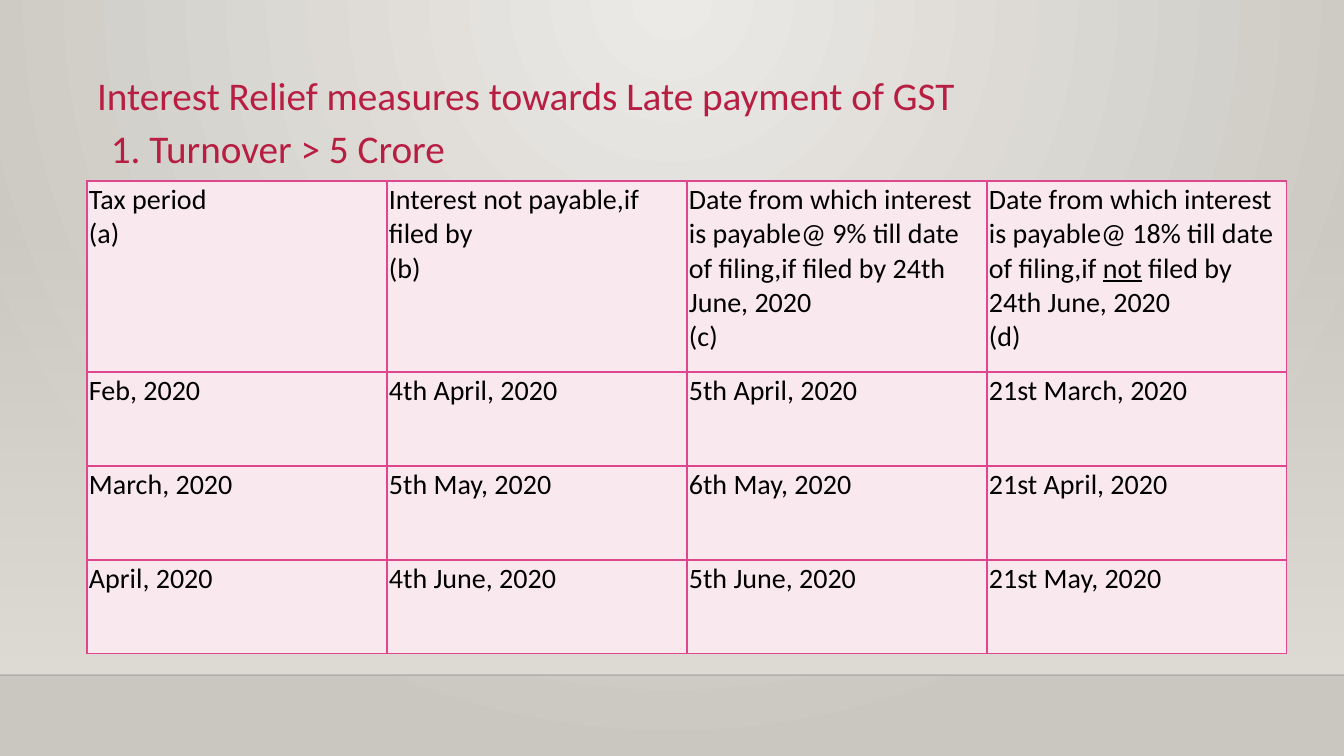
from dataclasses import dataclass

from lxml import etree
from pptx import Presentation
from pptx.dml.color import RGBColor
from pptx.enum.shapes import MSO_CONNECTOR, MSO_SHAPE
from pptx.enum.text import MSO_ANCHOR, MSO_AUTO_SIZE, PP_ALIGN
from pptx.oxml import parse_xml
from pptx.oxml.ns import nsdecls, qn
from pptx.slide import Slide
from pptx.table import _Cell as Cell
from pptx.util import Emu, Pt

PX_PER_INCH = 100.8
SLIDE_W, SLIDE_H = 1344, 756
FLOOR_Y = 675
FONT = "Calibri"
COLOURS = {
    "glow": "ECEAE7",
    "wall": "CAC7C1",
    "haze": "DFDBD5",
    "floor": "000001",
    "heading": "B71E42",
    "text": "000000",
    "cell": "F9E9EE",
    "border": "DE478E",
}

TABLE_LEFT, TABLE_TOP = 87, 181
COLUMN_W = 300
HEADER_H, ROW_H = 191, 94
CELL_INSET = 2
# Words between underscores are underlined.
RELIEF_ROWS = [
    [
        "Tax period\n(a)",
        "Interest not payable,if filed by\n(b)",
        "Date from which interest is payable@ 9% till date of filing,if filed by 24th June, 2020\n(c)",
        "Date from which interest is payable@ 18% till date of filing,if _not_ filed by 24th June, 2020\n(d)",
    ],
    ["Feb, 2020", "4th April, 2020", "5th April, 2020", "21st March, 2020"],
    ["March, 2020", "5th May, 2020", "6th May, 2020", "21st April, 2020"],
    ["April, 2020", "4th June, 2020", "5th June, 2020", "21st May, 2020"],
]


@dataclass(frozen=True)
class Heading:
    text: str
    left: int
    top: int
    width: int
    height: int
    wrap: bool


TITLE = Heading("Interest Relief measures towards Late payment of GST", 87, 66, 1005, 57, True)
SUBTITLE = Heading("1. Turnover > 5 Crore", 101, 119, 372, 57, False)


def px(length: int) -> Emu:
    return Emu(round(length * 914400 / PX_PER_INCH))


def colour(name: str) -> RGBColor:
    return RGBColor.from_string(COLOURS[name])


def paint_background(page: Slide) -> None:
    background = parse_xml(
        f'<p:bg {nsdecls("p", "a")}><p:bgPr><a:gradFill rotWithShape="1"><a:gsLst>'
        f'<a:gs pos="0"><a:srgbClr val="{COLOURS["glow"]}"/></a:gs>'
        f'<a:gs pos="100000"><a:srgbClr val="{COLOURS["wall"]}"/></a:gs></a:gsLst>'
        '<a:path path="circle"><a:fillToRect l="43000" r="43000" b="100000"/></a:path>'
        "</a:gradFill><a:effectLst/></p:bgPr></p:bg>"
    )
    page.element.cSld.insert(0, background)


def set_alpha(colour_element: etree._Element, percent: int) -> None:
    etree.SubElement(colour_element, qn("a:alpha")).set("val", str(percent * 1000))


def draw_haze(page: Slide) -> None:
    """Draw the band that grows opaque towards the floor line."""
    haze = page.shapes.add_shape(
        MSO_SHAPE.RECTANGLE, 0, px(223), px(SLIDE_W), px(FLOOR_Y - 223)
    )
    haze.shadow.inherit = False
    haze.line.fill.background()
    haze.fill.gradient()
    haze.fill.gradient_angle = 270
    for stop, opacity in zip(haze.fill.gradient_stops, (0, 100)):
        stop.color.rgb = colour("haze")
    stops = haze.element.spPr.findall(".//" + qn("a:srgbClr"))
    for element, opacity in zip(stops, (0, 100)):
        set_alpha(element, opacity)


def draw_floor_line(page: Slide) -> None:
    floor = page.shapes.add_connector(
        MSO_CONNECTOR.STRAIGHT, 0, px(FLOOR_Y), px(SLIDE_W), px(FLOOR_Y)
    )
    floor.line.width = Pt(1)
    floor.line.color.rgb = colour("floor")
    properties = floor.element.spPr
    set_alpha(properties.find(".//" + qn("a:srgbClr")), 20)
    etree.SubElement(properties, qn("a:effectLst"))


def place_heading(box, heading: Heading) -> None:
    box.left, box.top = px(heading.left), px(heading.top)
    box.width, box.height = px(heading.width), px(heading.height)
    frame = box.text_frame
    frame.text = heading.text
    frame.word_wrap = heading.wrap
    frame.auto_size = MSO_AUTO_SIZE.SHAPE_TO_FIT_TEXT
    frame.vertical_anchor = MSO_ANCHOR.TOP
    para = frame.paragraphs[0]
    para.alignment = PP_ALIGN.LEFT
    font = para.runs[0].font
    font.name, font.size = FONT, Pt(28)
    font.color.rgb = colour("heading")


def write_cell(cell: Cell, text: str) -> None:
    para = cell.text_frame.paragraphs[0]
    for line_number, line in enumerate(text.split("\n")):
        if line_number:
            para.add_line_break()
        for part_number, part in enumerate(line.split("_")):
            span = para.add_run()
            span.text = part
            span.font.name, span.font.size = FONT, Pt(20)
            span.font.color.rgb = colour("text")
            if part_number % 2:
                span.font.underline = True


def style_cell(cell: Cell) -> None:
    cell.margin_left = cell.margin_right = px(CELL_INSET)
    cell.margin_top = cell.margin_bottom = px(CELL_INSET)
    cell.fill.solid()
    cell.fill.fore_color.rgb = colour("cell")
    properties = cell._tc.get_or_add_tcPr()
    for position, side in enumerate(("lnL", "lnR", "lnT", "lnB")):
        border = parse_xml(
            f'<a:{side} {nsdecls("a")} w="{Pt(1)}"><a:solidFill>'
            f'<a:srgbClr val="{COLOURS["border"]}"/></a:solidFill></a:{side}>'
        )
        properties.insert(position, border)


def draw_relief_table(page: Slide) -> None:
    row_count, column_count = len(RELIEF_ROWS), len(RELIEF_ROWS[0])
    table = page.shapes.add_table(
        row_count, column_count, px(TABLE_LEFT), px(TABLE_TOP),
        px(COLUMN_W * column_count), px(HEADER_H + ROW_H * (row_count - 1)),
    ).table
    table.first_row = table.horz_banding = False
    for column in table.columns:
        column.width = px(COLUMN_W)
    for row_number, texts in enumerate(RELIEF_ROWS):
        table.rows[row_number].height = px(ROW_H if row_number else HEADER_H)
        for column_number, text in enumerate(texts):
            cell = table.cell(row_number, column_number)
            write_cell(cell, text)
            style_cell(cell)


def main() -> None:
    deck = Presentation()
    deck.slide_width, deck.slide_height = px(SLIDE_W), px(SLIDE_H)
    page = deck.slides.add_slide(deck.slide_layouts.get_by_name("Title Only"))
    paint_background(page)
    draw_haze(page)
    draw_floor_line(page)
    place_heading(page.shapes.title, TITLE)
    place_heading(page.shapes.add_textbox(0, 0, 0, 0), SUBTITLE)
    draw_relief_table(page)
    deck.save("out.pptx")


if __name__ == "__main__":
    main()
